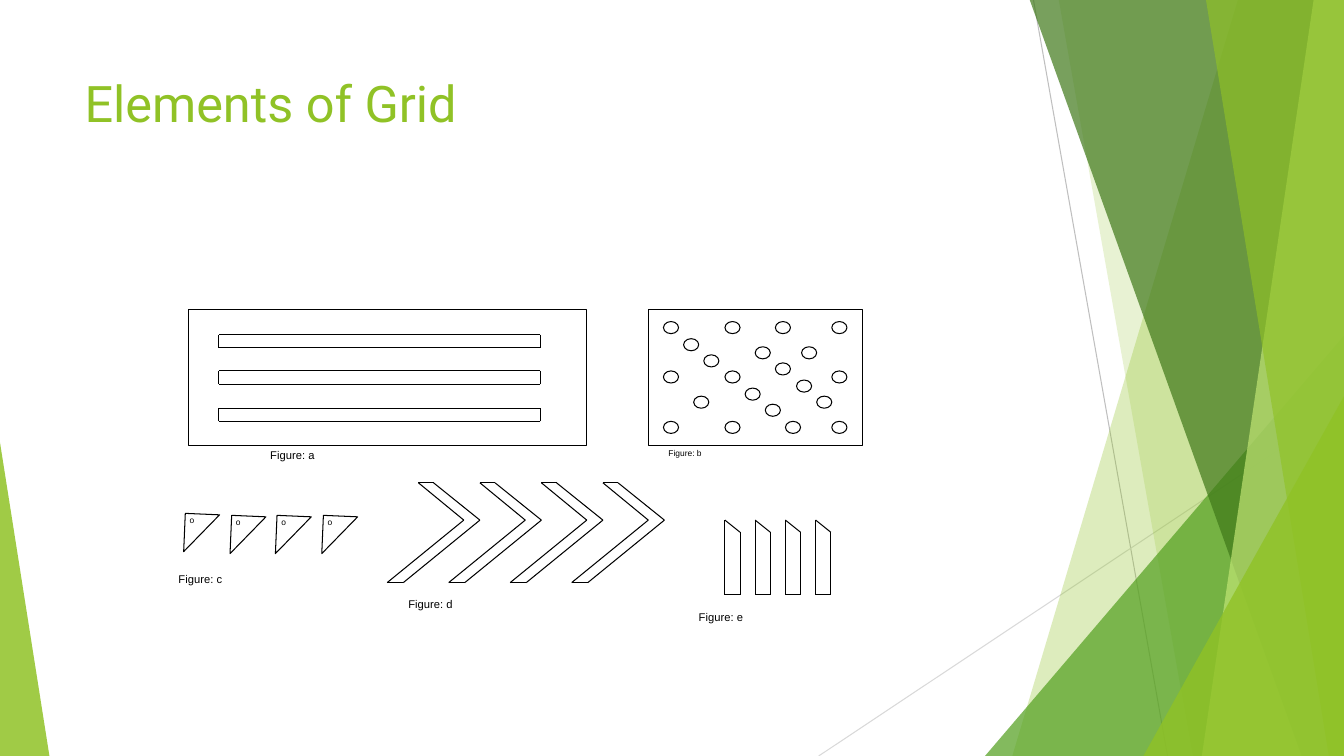
"""Build the "Elements of Grid" slide with its faceted border and five figures."""
from dataclasses import dataclass

import pptx
import pptx.dml.color
import pptx.enum.shapes
import pptx.oxml.ns
import pptx.presentation
import pptx.shapes.autoshape
import pptx.shapes.shapetree
import pptx.util
from lxml import etree

EMU_PER_PX = 9144
WIDTH, HEIGHT = 1333, 750
SHAPE = pptx.enum.shapes.MSO_SHAPE
Shapes = pptx.shapes.shapetree.SlideShapes
Shape = pptx.shapes.autoshape.Shape
Point = tuple[int, int]


@dataclass(frozen=True)
class Theme:
    lime: str = "90C226"
    green: str = "54A021"
    forest: str = "3F7819"
    pale: str = "C0E474"
    ink: str = "000000"
    paper: str = "FFFFFF"
    ray_dark: str = "BFBFBF"
    ray_light: str = "D9D9D9"
    title_font: str = "Roboto"
    body_font: str = "Arial"
    title_size: int = 36
    caption_size: int = 8
    small_size: int = 6
    line_width: float = 0.75


THEME = Theme()


@dataclass(frozen=True)
class Box:
    x: int
    y: int
    w: int
    h: int


@dataclass(frozen=True)
class Facet:
    top_x: int
    bottom_x: int
    color: str
    alpha: int


@dataclass(frozen=True)
class Wedge:
    box: Box
    apex: int
    color: str
    alpha: int


@dataclass(frozen=True)
class Label:
    text: str
    box: Box
    size: int = THEME.caption_size
    font: str = THEME.body_font
    color: str = THEME.ink
    inset: Point = (5, 3)


@dataclass(frozen=True)
class Outline:
    points: tuple[Point, ...]
    count: int
    pitch: int


BORDER = (
    Facet(1228, 1004, THEME.lime, 30),
    Facet(1050, 1183, THEME.lime, 20),
    Wedge(Box(977, 333, 356, 417), 1, THEME.green, 72),
    Facet(1021, 1291, THEME.forest, 70),
    Facet(1303, 1192, THEME.pale, 70),
    Facet(1196, 1318, THEME.lime, 65),
    Wedge(Box(1134, 393, 199, 357), 1, THEME.lime, 80),
    Wedge(Box(0, 439, 49, 311), 0, THEME.lime, 85),
)
PANELS = (Box(187, 307, 395, 135), Box(643, 307, 213, 135))
BAR_TOPS = (332, 368, 405)
DOT_ROWS = {
    319: (658, 719, 769, 825),
    336: (678,),
    344: (749, 795),
    352: (698,),
    360: (769,),
    368: (658, 719, 825),
    377: (790,),
    385: (739,),
    393: (688, 810),
    401: (759,),
    418: (658, 719, 779, 825),
}
BARS = tuple(
    Outline(((217, y), (536, y), (536, y + 13), (217, y + 13)), 1, 0) for y in BAR_TOPS
)
CHEVRONS = Outline(
    ((415, 479), (430, 479), (476, 516), (400, 578), (384, 578), (460, 516)), 4, 61
)
POSTS = Outline(((719, 516), (734, 528), (734, 590), (719, 590)), 4, 30)
FLAGS = ((183, 510), (229, 512), (274, 512), (320, 512))
TITLE = Label("Elements of Grid", Box(74, 67, 940, 144), THEME.title_size,
              THEME.title_font, THEME.lime, (10, 5))
CAPTIONS = (
    Label("Figure: a", Box(263, 442, 171, 25)),
    Label("Figure: b", Box(658, 442, 171, 19), THEME.small_size),
    Label("Figure: e", Box(688, 602, 171, 25)),
    Label("Figure: d", Box(400, 590, 171, 37)),
    Label("Figure: c", Box(172, 565, 171, 37)),
)


def px(value: int) -> pptx.util.Emu:
    """Turn px into EMU."""
    return pptx.util.Emu(value * EMU_PER_PX)


def rgb(color: str) -> pptx.dml.color.RGBColor:
    """Turn a hex string into a colour."""
    return pptx.dml.color.RGBColor.from_string(color)


def fill_facet(sp: Shape, color: str, alpha: int) -> None:
    """Fill a borderless shape with a translucent colour."""
    sp.shadow.inherit = False
    sp.line.fill.background()
    sp.fill.solid()
    sp.fill.fore_color.rgb = rgb(color)
    clr = sp._element.spPr.find(".//" + pptx.oxml.ns.qn("a:srgbClr"))
    etree.SubElement(clr, pptx.oxml.ns.qn("a:alpha")).set("val", str(alpha * 1000))


def add_preset(shapes: Shapes, kind: SHAPE, box: Box) -> Shape:
    """Add a white preset shape with a thin black outline."""
    sp = shapes.add_shape(kind, px(box.x), px(box.y), px(box.w), px(box.h))
    sp.shadow.inherit = False
    sp.fill.solid()
    sp.fill.fore_color.rgb = rgb(THEME.paper)
    sp.line.color.rgb = rgb(THEME.ink)
    sp.line.width = pptx.util.Pt(THEME.line_width)
    return sp


def add_line(shapes: Shapes, start: Point, end: Point, color: str = THEME.ink) -> None:
    """Add a thin straight line."""
    straight = pptx.enum.shapes.MSO_CONNECTOR.STRAIGHT
    line = shapes.add_connector(straight, *map(px, start + end))
    line.line.color.rgb = rgb(color)
    line.line.width = pptx.util.Pt(THEME.line_width)
    etree.SubElement(line._element.spPr, pptx.oxml.ns.qn("a:effectLst"))


def add_label(shapes: Shapes, label: Label) -> None:
    """Add a one-run text box."""
    box = label.box
    tf = shapes.add_textbox(px(box.x), px(box.y), px(box.w), px(box.h)).text_frame
    tf.word_wrap = True
    tf.margin_left = tf.margin_right = px(label.inset[0])
    tf.margin_top = tf.margin_bottom = px(label.inset[1])
    r = tf.paragraphs[0].add_run()
    r.text = label.text
    r.font.name = label.font
    r.font.size = pptx.util.Pt(label.size)
    r.font.color.rgb = rgb(label.color)


def add_outline(shapes: Shapes, outline: Outline) -> None:
    """Draw a closed outline line by line at each step of its pitch."""
    for i in range(outline.count):
        points = [(x + i * outline.pitch, y) for x, y in outline.points]
        for start, end in zip(points, points[1:] + points[:1]):
            add_line(shapes, start, end)


def add_border(shapes: Shapes) -> None:
    """Draw the rays and translucent facets along the slide edges."""
    add_line(shapes, (1025, 0), (1158, HEIGHT), THEME.ray_dark)
    add_line(shapes, (WIDTH, 403), (812, HEIGHT), THEME.ray_light)
    for part in BORDER:
        if isinstance(part, Facet):
            builder = shapes.build_freeform(part.top_x, -1, scale=EMU_PER_PX)
            builder.add_line_segments(
                [(WIDTH, -1), (WIDTH, HEIGHT), (part.bottom_x, HEIGHT)], close=True
            )
            sp = builder.convert_to_shape()
        else:
            sp = add_preset(shapes, SHAPE.ISOSCELES_TRIANGLE, part.box)
            sp.adjustments[0] = part.apex
        fill_facet(sp, part.color, part.alpha)


def add_flag(shapes: Shapes, x: int, y: int) -> None:
    """Draw a tilted right triangle marked with a small o."""
    sp = add_preset(shapes, SHAPE.RIGHT_TRIANGLE, Box(x, y, 34, 38))
    sp.rotation = 182.4
    sp._element.spPr.xfrm.set("flipH", "1")
    add_label(shapes, Label("o", Box(x, y - 2, 80, 19), THEME.small_size))


def main() -> None:
    """Build and save the slide."""
    prs = pptx.Presentation()
    prs.slide_width, prs.slide_height = px(WIDTH), px(HEIGHT)
    shapes = prs.slides.add_slide(prs.slide_layouts[6]).shapes
    add_border(shapes)
    add_label(shapes, TITLE)
    for panel in PANELS:
        add_preset(shapes, SHAPE.RECTANGLE, panel)
    for y, row in DOT_ROWS.items():
        for x in row:
            add_preset(shapes, SHAPE.OVAL, Box(x, y, 15, 12))
    for outline in (*BARS, POSTS, CHEVRONS):
        add_outline(shapes, outline)
    for x, y in FLAGS:
        add_flag(shapes, x, y)
    for caption in CAPTIONS:
        add_label(shapes, caption)
    prs.save("out.pptx")


if __name__ == "__main__":
    main()
